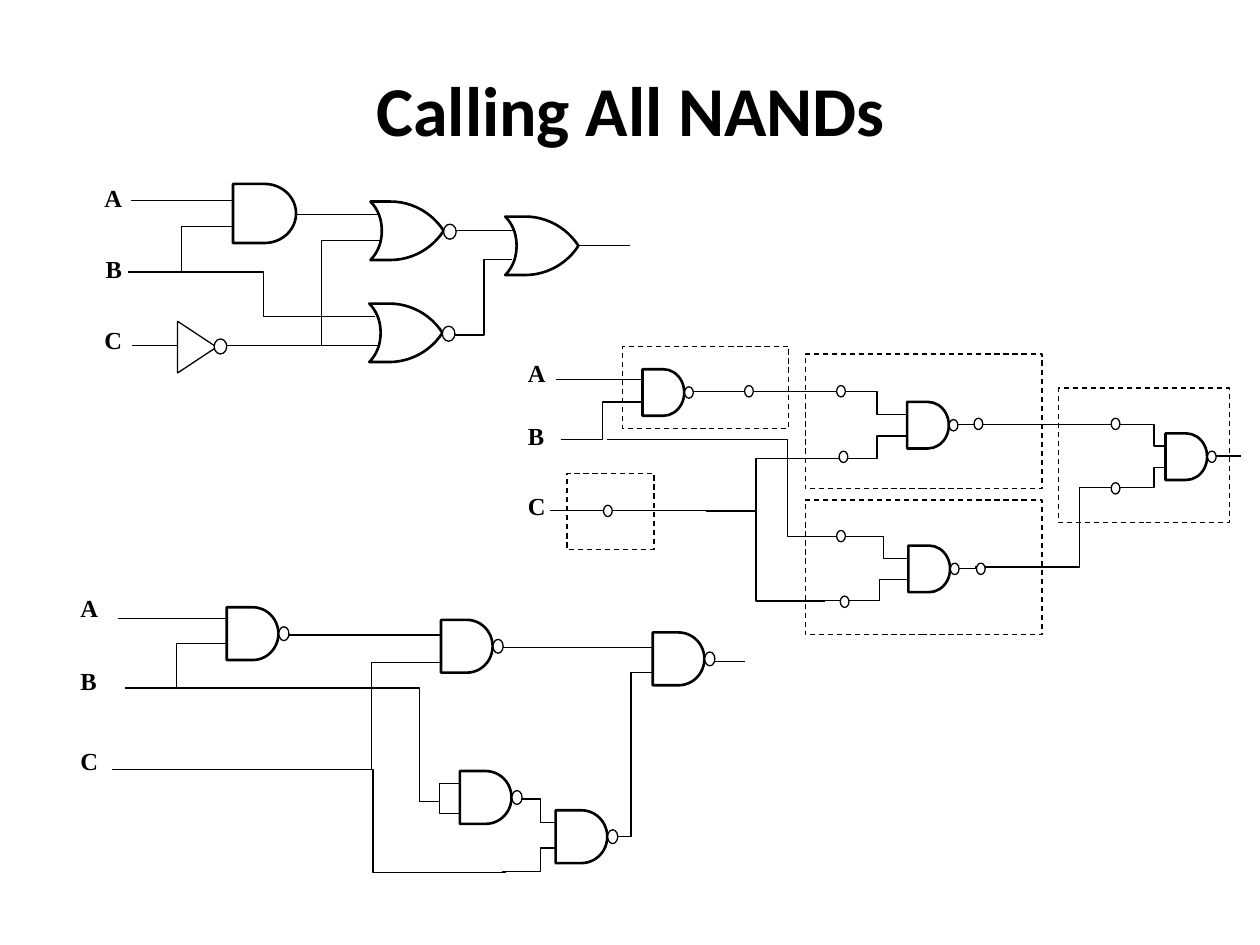
from typing import NamedTuple

from lxml import etree
from pptx import Presentation
from pptx.dml.color import RGBColor
from pptx.enum.dml import MSO_LINE
from pptx.enum.shapes import MSO_CONNECTOR, MSO_SHAPE
from pptx.enum.text import MSO_AUTO_SIZE, PP_ALIGN
from pptx.oxml.ns import qn
from pptx.util import Pt

AND_BODY = MSO_SHAPE.FLOWCHART_DELAY
BUBBLE = MSO_SHAPE.OVAL
BOX = MSO_SHAPE.RECTANGLE
INVERTER = MSO_SHAPE.ISOSCELES_TRIANGLE
STRAIGHT = MSO_CONNECTOR.STRAIGHT
DASH = MSO_LINE.DASH
CENTER = PP_ALIGN.CENTER
GROW = MSO_AUTO_SIZE.SHAPE_TO_FIT_TEXT

BLACK, WHITE = "000000", "FFFFFF"
THIN, THICK = 0.75, 1.5
CURVE_STEPS = 12

Point = tuple[float, float]


class Size(NamedTuple):
    width: float
    height: float


class Label(NamedTuple):
    text: str
    left: float
    top: float
    size: Size


class Circuit(NamedTuple):
    wires: list[list[Point]]
    labels: list[Label]
    gate: Size
    bubble: Size
    ands: list[Point] = []
    nands: list[Point] = []
    ors: list[Point] = []
    nors: list[Point] = []
    inverters: list[Point] = []
    bubbles: list[Point] = []
    ties: list[Point] = []
    frames: list[tuple[Point, Size]] = []


INVERTER_SIZE = Size(29.5, 22.3)
TIE_SIZE = Size(15.1, 17.3)
INPUT_SIZE = Size(25.2, 28.1)
STAGE_SIZE = Size(135.4, 77)

mixed_gates = Circuit(
    wires=[
        [(256.3, 131.8), (294.5, 131.8)],
        [(75.6, 197.3), (183.6, 197.3), (183.6, 137.5), (217.4, 137.5)],
        [(163.4, 122.4), (216.7, 122.4)],
        [(74.9, 114.5), (139.7, 114.5)],
        [(73.4, 155.5), (103.7, 155.5), (103.7, 129.6), (141.8, 129.6)],
        [(183.6, 197.3), (217.4, 197.3)],
        [(214.6, 180.7), (150.5, 180.7), (150.5, 155.5), (103.7, 155.5)],
        [(252.7, 191.5), (276.5, 191.5), (276.5, 148.3), (292.3, 148.3)],
        [(330.5, 140.4), (360, 140.4)],
    ],
    labels=[Label("A", 52.6, 100.8, INPUT_SIZE), Label("B", 53.3, 141.8, INPUT_SIZE),
            Label("C", 52.6, 182.2, INPUT_SIZE)],
    gate=Size(36, 33.8), bubble=Size(7.2, 8.6),
    ands=[(133.2, 105.1)], ors=[(288.7, 123.8)], nors=[(211.7, 115.2), (211, 173.5)],
    inverters=[(97.9, 187.2)], bubbles=[(122.4, 193.7)],
)

bubbled_gates = Circuit(
    wires=[
        [(558, 242.6), (640.8, 242.6)],
        [(557.3, 324), (617, 324), (617, 278.6), (640.8, 278.6)],
        [(347, 251.3), (450, 251.3), (450, 306.7), (476.6, 306.7)],
        [(314.6, 291.6), (432, 291.6), (432, 262.1), (468.7, 262.1)],
        [(317.5, 216.7), (373.7, 216.7)],
        [(320.4, 251.3), (344.2, 251.3), (344.2, 229.7), (375.1, 229.7)],
        [(471.6, 343.4), (432, 343.4), (432, 292), (403.2, 292)],
        [(389.5, 223.9), (468.7, 223.9)],
        [(467.3, 223.9), (501.1, 223.9), (501.1, 236.9), (523.4, 236.9)],
        [(533.5, 242.6), (560.9, 242.6)],
        [(467.3, 262.1), (501.1, 262.1), (501.1, 249.1), (523.4, 249.1)],
        [(640.8, 242.6), (659.5, 242.6), (659.5, 254.9), (671.8, 254.9)],
        [(681.8, 260.6), (709.2, 260.6)],
        [(640.8, 278.6), (659.5, 278.6), (659.5, 267.1), (671.8, 267.1)],
        [(475.2, 306.7), (504.7, 306.7), (504.7, 319), (524.9, 319)],
        [(535, 324.7), (561.6, 324.7)],
        [(468.7, 343), (502.6, 343), (502.6, 331.2), (524.9, 331.2)],
    ],
    labels=[Label("A", 294.5, 200.9, Size(29.5, 33.8)), Label("B", 294.5, 236.9, Size(34.6, 35.3)),
            Label("C", 294.5, 277.2, Size(27.4, 33.1))],
    gate=Size(23.8, 26.6), bubble=Size(5, 6.5),
    nands=[(367.2, 211), (518.4, 229.7), (666, 247.7), (519.1, 311.8)],
    bubbles=[(425.5, 220.3), (478.1, 220.3), (479.5, 257.8), (478.1, 303.1), (480.2, 340.6),
             (556.6, 239), (558, 321.8), (635, 275.8), (635, 239), (344.9, 288.7)],
    frames=[((355.7, 198), Size(95, 46.8)), ((460.1, 202.3), STAGE_SIZE),
            ((460.1, 285.8), STAGE_SIZE), ((604.8, 221.8), Size(97.9, 77)),
            ((324, 270.7), Size(49.7, 43.2))],
)

nand_only = Circuit(
    wires=[
        [(343.4, 478.1), (360.7, 478.1), (360.7, 384.5), (380.2, 384.5)],
        [(261.4, 457.9), (239.8, 457.9), (239.8, 393.1), (97.9, 393.1)],
        [(64.1, 439.9), (212.4, 439.9), (212.4, 378.7), (258.5, 378.7)],
        [(67.7, 353.5), (136.8, 353.5)],
        [(71.3, 393.1), (100.8, 393.1), (100.8, 367.9), (139, 367.9)],
        [(289.4, 498.6), (213.1, 498.6), (213.1, 439.9), (156.2, 439.9)],
        [(157, 362.9), (257, 362.9)],
        [(276.5, 370.1), (378.7, 370.1)],
        [(392.4, 378), (425.5, 378)],
        [(286.6, 456.5), (308.9, 456.5), (308.9, 470.2), (324, 470.2)],
        [(286.6, 498.2), (308.9, 498.2), (308.9, 484.6), (324, 484.6)],
    ],
    labels=[Label("A", 38.9, 335.5, Size(36, 38.9)), Label("B", 38.9, 377.3, Size(43.2, 40.3)),
            Label("C", 38.9, 422.6, Size(33.8, 37.4))],
    gate=Size(29.5, 30.2), bubble=Size(5.8, 7.9),
    nands=[(129.6, 347), (252, 354.2), (373, 361.4), (262.8, 440.6), (317.5, 463)],
    ties=[(251.3, 447.8)],
)


def color(hex_value: str) -> RGBColor:
    return RGBColor.from_string(hex_value)


def style_line(shape, weight: float) -> None:
    shape.line.color.rgb = color(BLACK)
    shape.line.width = Pt(weight)


def add_text(slide, label: Label, font_name: str, font_size: float):
    box = slide.shapes.add_textbox(Pt(label.left), Pt(label.top), *map(Pt, label.size))
    frame = box.text_frame
    frame.word_wrap = True
    frame.text = label.text
    font = frame.paragraphs[0].runs[0].font
    font.name, font.size, font.bold = font_name, Pt(font_size), True
    font.color.rgb = color(BLACK)
    return frame


def add_part(slide, kind, corner: Point, size: Size, weight: float = THIN, filled: bool = True):
    part = slide.shapes.add_shape(kind, *map(Pt, corner + size))
    part.shadow.inherit = False
    if filled:
        part.fill.solid()
        part.fill.fore_color.rgb = color(WHITE)
    else:
        part.fill.background()
    style_line(part, weight)
    return part


def add_outline(slide, points: list[Point], weight: float, close: bool) -> None:
    start, *rest = [(Pt(x), Pt(y)) for x, y in points]
    builder = slide.shapes.build_freeform(*start)
    builder.add_line_segments(rest, close=close)
    outline = builder.convert_to_shape()
    outline.shadow.inherit = False
    outline.fill.background()
    style_line(outline, weight)


def add_wire(slide, points: list[Point]) -> None:
    if len(points) > 2:
        add_outline(slide, points, THIN, close=False)
        return
    wire = slide.shapes.add_connector(STRAIGHT, *map(Pt, points[0] + points[1]))
    etree.SubElement(wire._element.spPr, qn("a:effectLst"))
    style_line(wire, THIN)


def curve(a: Point, b: Point, c: Point, d: Point) -> list[Point]:
    """Points along a cubic curve from a to d."""
    steps = [i / CURVE_STEPS for i in range(CURVE_STEPS + 1)]
    return [tuple((1 - t) ** 3 * p + 3 * (1 - t) ** 2 * t * q + 3 * (1 - t) * t * t * r + t ** 3 * s
                  for p, q, r, s in zip(a, b, c, d)) for t in steps]


def add_or(slide, corner: Point) -> None:
    height = 33.4
    front = curve((11.5, 0), (23.8, 0), (35.3, 6.5), (41.8, height / 2))
    back = curve((0, 0), (4.3, 4.3), (6.5, 10.1), (6.5, height / 2))
    upper = back[::-1] + front
    lower = [(x, height - y) for x, y in upper[-2:0:-1]]
    add_outline(slide, [(corner[0] + x, corner[1] + y) for x, y in upper + lower], THICK, close=True)


def draw_circuit(slide, circuit: Circuit) -> None:
    gate, bubble = circuit.gate, circuit.bubble
    for wire in circuit.wires:
        add_wire(slide, wire)
    for label in circuit.labels:
        add_text(slide, label, "Times New Roman", 14)
    for corner in circuit.inverters:
        add_part(slide, INVERTER, corner, INVERTER_SIZE).rotation = 90
    for corner in circuit.ties:
        add_part(slide, BOX, corner, TIE_SIZE)
    for corner in circuit.ands + circuit.nands:
        add_part(slide, AND_BODY, corner, gate, THICK)
    for corner in circuit.ors + circuit.nors:
        add_or(slide, corner)
    for corner, size in circuit.frames:
        add_part(slide, BOX, corner, size, filled=False).line.dash_style = DASH
    # Inverting outputs sit at the middle of the gate's right edge
    outputs = [(x + gate.width + 0.2, y + (gate.height - bubble.height) / 2) for x, y in circuit.nands]
    outputs += [(x + 41.8, y + 12.9) for x, y in circuit.nors]
    for corner in outputs + circuit.bubbles:
        add_part(slide, BUBBLE, corner, bubble)


def main() -> None:
    deck = Presentation()
    deck.slide_width, deck.slide_height = Pt(720), Pt(540)
    slide = deck.slides.add_slide(deck.slide_layouts[6])

    # Title
    title = add_text(slide, Label("Calling All NANDs", 93.6, 34.6, Size(533.5, 55.4)), "Calibri", 40)
    title.auto_size = GROW
    title.paragraphs[0].alignment = CENTER

    # Three stages of the conversion
    for circuit in (mixed_gates, bubbled_gates, nand_only):
        draw_circuit(slide, circuit)
    deck.save("out.pptx")


if __name__ == "__main__":
    main()
